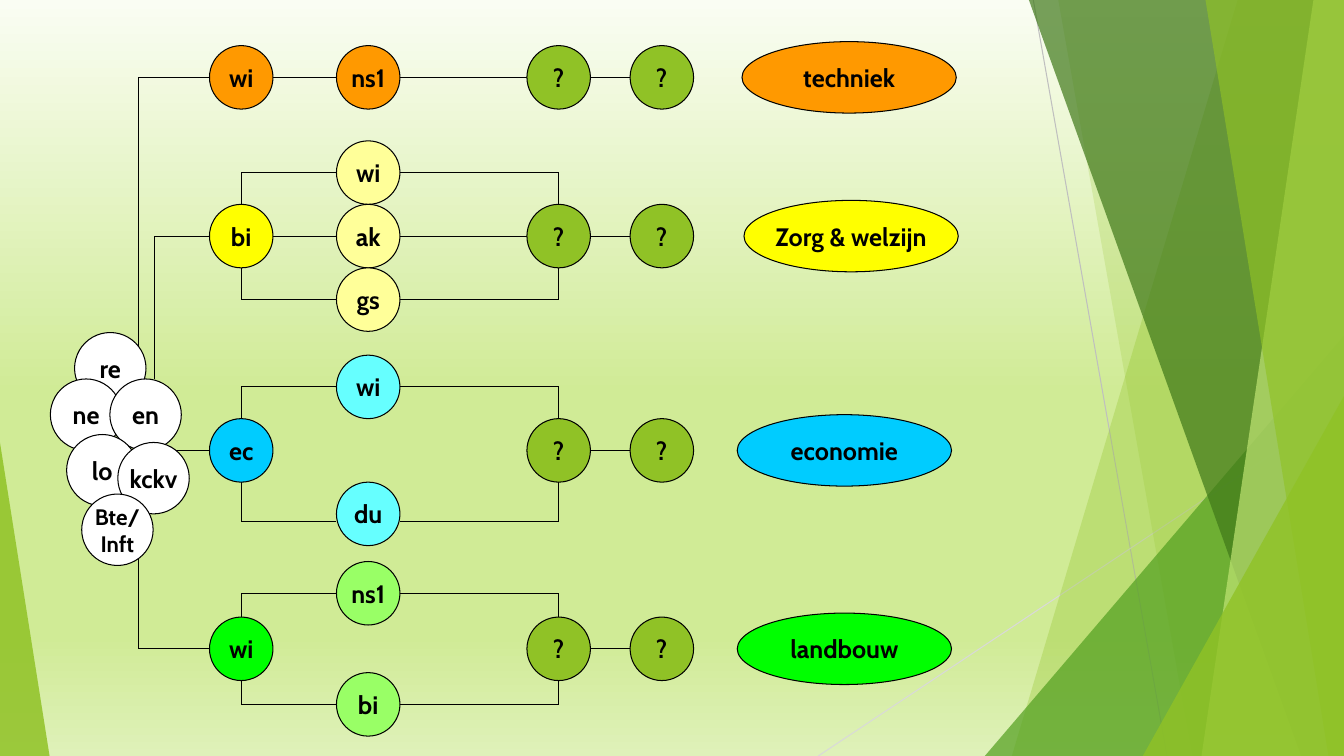
from itertools import pairwise

from copy import deepcopy
from lxml import etree
from pptx import Presentation
from pptx.dml.color import RGBColor
from pptx.enum import shapes, text
from pptx.oxml import ns
from pptx.util import Cm, Pt

BLACK = RGBColor(0x00, 0x00, 0x00)
WHITE = RGBColor(0xFF, 0xFF, 0xFF)
GREY = RGBColor(0xBF, 0xBF, 0xBF)
SILVER = RGBColor(0xD9, 0xD9, 0xD9)
LEAF = RGBColor(0x90, 0xC2, 0x26)
GRASS = RGBColor(0x54, 0xA0, 0x21)
MOSS = RGBColor(0x3F, 0x78, 0x19)
LIME = RGBColor(0xC0, 0xE4, 0x74)
ORANGE = RGBColor(0xFF, 0x99, 0x00)
YELLOW = RGBColor(0xFF, 0xFF, 0x00)
CREAM = RGBColor(0xFF, 0xFF, 0x99)
BLUE = RGBColor(0x00, 0xCC, 0xFF)
AQUA = RGBColor(0x66, 0xFF, 0xFF)
GREEN = RGBColor(0x00, 0xFF, 0x00)
MINT = RGBColor(0x99, 0xFF, 0x66)
SKY = [
    (0, RGBColor(0xFA, 0xFD, 0xF3)),
    (0.52, RGBColor(0xD0, 0xEB, 0x96)),
    (0.84, RGBColor(0xD0, 0xEB, 0x96)),
    (1, RGBColor(0xDF, 0xF1, 0xB9)),
]

WIDE, HIGH = 33.87, 19.05
DOT, BALL, OVAL = 1.6, 1.8, 5.4  # node, stem ball, label width
CORE, MID, PICK, LAST = 6.08, 9.28, 14.08, 16.68  # column centres

# top x, bottom x, colour, opacity
FACETS = [
    (31.19, 25.5, LEAF, 30),
    (26.67, 30.05, LEAF, 20),
    (25.93, 32.79, MOSS, 70),
    (33.1, 30.28, LIME, 70),
    (30.38, 33.48, LEAF, 65),
]

# y, trunk start, core, core fill, branches (name, y, wire y), branch fill,
# label, label x
ROWS = [
    (1.95, (3.48, 9.55), "wi", ORANGE, [("ns1", 1.95, 1.95)], ORANGE,
     "techniek", 21.4),
    (5.95, (3.89, 9.55), "bi", YELLOW,
     [("wi", 4.35, 4.35), ("ak", 5.95, 5.95), ("gs", 7.55, 7.55)], CREAM,
     "Zorg & welzijn", 21.45),
    (11.35, (3.89, 11.35), "ec", BLUE,
     [("wi", 9.75, 9.75), ("du", 12.95, 13.15)], AQUA,
     "economie", 21.28),
    (16.35, (3.48, 11.35), "wi", GREEN,
     [("ns1", 14.95, 14.95), ("bi", 17.75, 17.75)], MINT,
     "landbouw", 21.28),
]

STEM = [
    ("re", 2.78, 9.28, 18),
    ("ne", 2.17, 10.45, 18),
    ("en", 3.67, 10.45, 18),
    ("lo", 2.58, 11.85, 18),
    ("kckv", 3.87, 12.05, 18),
    ("Bte/\nInft", 2.96, 13.35, 16),
]


class Board:
    font = "Cabin"
    pen = Pt(0.75)

    def __init__(self, slide):
        self.slide = slide
        self.shapes = slide.shapes

    def sky(self, stops):
        fill = self.slide.background.fill
        fill.gradient()
        fill.gradient_angle = 270
        group = self.slide.element.find(".//" + ns.qn("a:gsLst"))
        first = deepcopy(group[0])
        group.clear()
        for spot, _ in stops:
            stop = deepcopy(first)
            stop.set("pos", str(int(spot * 100000)))
            group.append(stop)
        for stop, (_, color) in zip(fill.gradient_stops, stops):
            stop.color.rgb = color

    def tint(self, shape, color, alpha):
        """Give a borderless fill with opacity in percent."""
        shape.shadow.inherit = False
        shape.line.fill.background()
        shape.fill.solid()
        shape.fill.fore_color.rgb = color
        tone = shape.element.spPr.find(".//" + ns.qn("a:srgbClr"))
        etree.SubElement(tone, ns.qn("a:alpha"), val=str(alpha * 1000))

    def facet(self, top, base, color, alpha):
        form = self.shapes.build_freeform(Cm(top), 0)
        form.add_line_segments(
            [(Cm(WIDE), 0), (Cm(WIDE), Cm(HIGH)), (Cm(base), Cm(HIGH))])
        self.tint(form.convert_to_shape(), color, alpha)

    def wedge(self, x, wide, high, tip, color, alpha):
        """Stand a triangle on the slide's lower edge."""
        shape = self.shapes.add_shape(
            shapes.MSO_SHAPE.ISOSCELES_TRIANGLE,
            Cm(x), Cm(HIGH - high), Cm(wide), Cm(high))
        shape.adjustments[0] = tip
        self.tint(shape, color, alpha)

    def wire(self, *points, color=BLACK):
        """Join the points in turn with straight lines."""
        for start, end in pairwise(points):
            if start == end:
                continue
            line = self.shapes.add_connector(
                shapes.MSO_CONNECTOR.STRAIGHT, *map(Cm, start + end))
            line.line.color.rgb = color
            line.line.width = self.pen
            etree.SubElement(line.element.spPr, ns.qn("a:effectLst"))

    def oval(self, words, x, y, fill, wide=DOT, high=DOT, size=18):
        """Draw a labelled ellipse around its centre."""
        shape = self.shapes.add_shape(
            shapes.MSO_SHAPE.OVAL, Cm(x - wide / 2), Cm(y - high / 2),
            Cm(wide), Cm(high))
        shape.shadow.inherit = False
        shape.fill.solid()
        shape.fill.fore_color.rgb = fill
        shape.line.color.rgb = BLACK
        shape.line.width = self.pen
        frame = shape.text_frame
        frame.word_wrap = False
        frame.vertical_anchor = text.MSO_ANCHOR.MIDDLE
        para = frame.paragraphs[0]
        para.alignment = text.PP_ALIGN.CENTER
        for i, part in enumerate(words.split("\n")):
            if i:
                para.add_line_break()
            run = para.add_run()
            run.text = part
            run.font.name = self.font
            run.font.size = Pt(size)
            run.font.bold = True
            run.font.color.rgb = BLACK

    def route(self, y, trunk, core, fill, twigs, tone, label, x):
        """Draw one row from the trunk to its sector label."""
        half = DOT / 2
        self.wire(trunk, (trunk[0], y), (CORE - half, y))
        self.wire((PICK + half, y), (LAST - half, y))
        for name, mid, level in twigs:
            for hub, side in ((CORE, 1), (PICK, -1)):
                end = (MID - side * half, level)
                if level == y:
                    self.wire((hub + side * half, y), end)
                else:
                    edge = y + (half if level > y else -half)
                    self.wire((hub, edge), (hub, level), end)
            self.oval(name, MID, mid, tone)
        self.oval(core, CORE, y, fill)
        for spot in (PICK, LAST):
            self.oval("?", spot, y, LEAF)
        self.oval(label, x, y, fill, OVAL, BALL)


def main():
    deck = Presentation()
    deck.slide_width, deck.slide_height = Cm(WIDE), Cm(HIGH)
    board = Board(deck.slides.add_slide(deck.slide_layouts[6]))
    board.sky(SKY)
    board.wire((26.04, 0), (29.41, HIGH), color=GREY)
    board.wire((WIDE, 10.24), (20.62, HIGH), color=SILVER)
    for facet in FACETS[:2]:
        board.facet(*facet)
    board.wedge(24.82, 9.05, 10.59, 1, GRASS, 72)
    for facet in FACETS[2:]:
        board.facet(*facet)
    board.wedge(28.8, 5.07, 9.07, 1, LEAF, 80)
    board.wedge(0, 1.25, 7.9, 0, LEAF, 85)
    for row in ROWS:
        board.route(*row)
    for name, x, y, size in STEM:
        board.oval(name, x, y, WHITE, BALL, BALL, size)
    deck.save("out.pptx")


if __name__ == "__main__":
    main()
